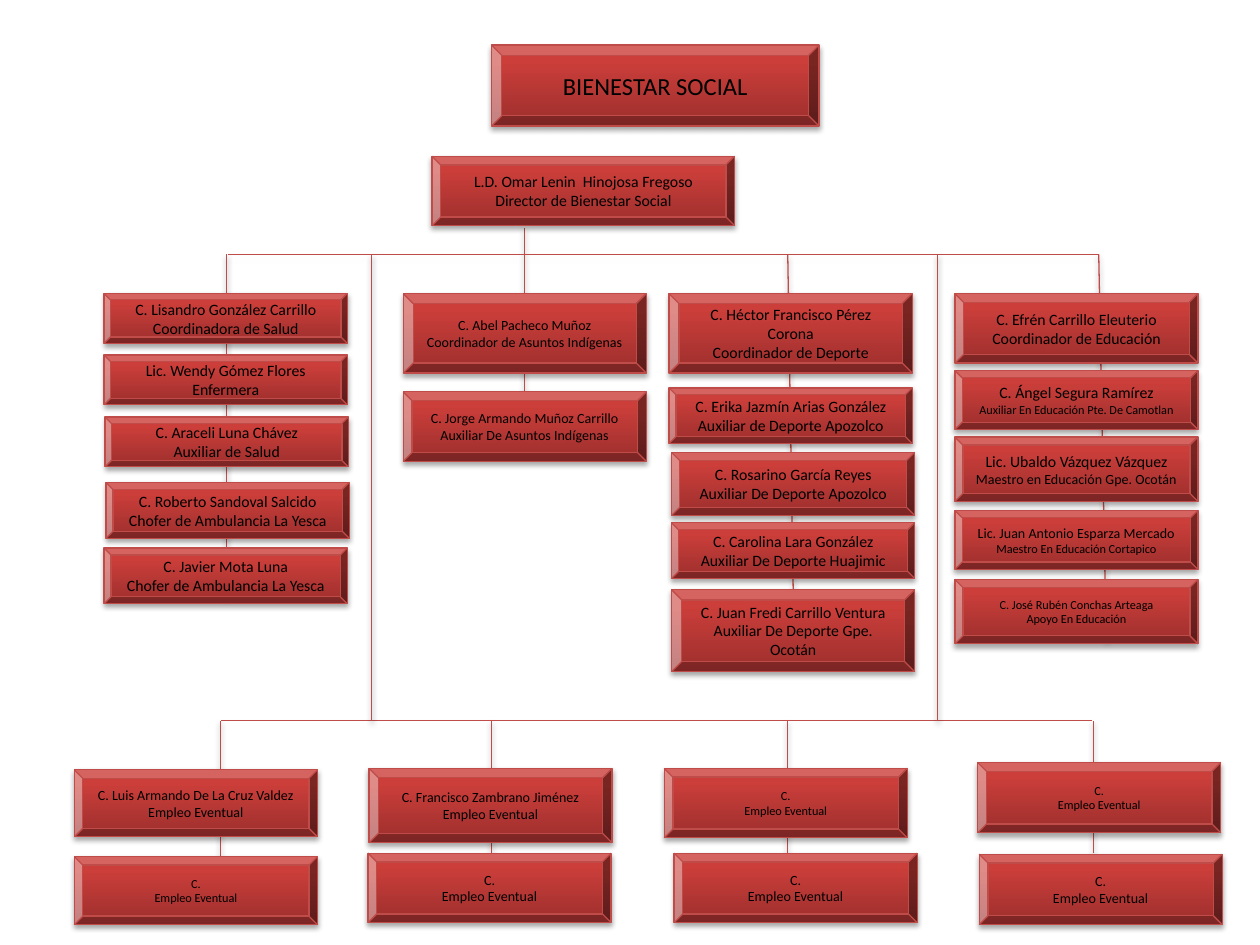
from lxml import etree
from pptx import Presentation
from pptx import util as u
from pptx.dml.color import RGBColor
from pptx.enum import shapes, text

BLACK = RGBColor(0x00, 0x00, 0x00)
BORDER = RGBColor(0xBF, 0x4C, 0x48)
DARK_RED = RGBColor(0x9C, 0x2F, 0x2D)
RED = RGBColor(0xCB, 0x3E, 0x3A)
BRIGHT_RED = RGBColor(0xCE, 0x3B, 0x37)

NS = 'xmlns:a="http://schemas.openxmlformats.org/drawingml/2006/main"'
STOPS = "".join(
    f'<a:gs pos="{pos * 1000}"><a:srgbClr val="{color}"/></a:gs>'
    for pos, color in ((0, DARK_RED), (80, RED), (100, BRIGHT_RED))
)
GRADIENT = (f'<a:gradFill {NS} rotWithShape="1"><a:gsLst>{STOPS}</a:gsLst>'
            '<a:lin ang="16200000" scaled="0"/></a:gradFill>')
SHADOW = (f'<a:effectLst {NS}><a:outerShdw blurRad="{u.Pt(3.1)}" dist="{u.Pt(1.8)}" '
          'dir="5400000" rotWithShape="0">'
          f'<a:srgbClr val="{BLACK}"><a:alpha val="35000"/></a:srgbClr>'
          '</a:outerShdw></a:effectLst>')

BOX_W = 4.9
TOP_BUS, LOW_BUS = 5.13, 14.53
EVENTUAL = "Empleo Eventual"

# left, top, height, then (text, size) for the name and the post
STAFF = [
    # Salud
    (2.1, 5.92, 1, ("C. Lisandro González Carrillo", 9), ("Coordinadora de Salud", 9)),
    (2.1, 7.16, 1, ("Lic. Wendy Gómez Flores", 9), ("Enfermera", 9)),
    (2.12, 8.41, 1, ("C. Araceli Luna Chávez", 9), ("Auxiliar de Salud", 9)),
    (2.14, 9.73, 1.12, ("C. Roberto Sandoval Salcido", 9), ("Chofer de Ambulancia La Yesca", 9)),
    (2.1, 11.05, 1.12, ("C. Javier Mota Luna", 9), ("Chofer de Ambulancia La Yesca", 9)),
    # Asuntos Indígenas
    (8.13, 5.92, 1.6, ("C. Abel Pacheco Muñoz", 8), ("Coordinador de Asuntos Indígenas", 8)),
    (8.13, 7.9, 1.4, ("C. Jorge Armando Muñoz Carrillo", 8), ("Auxiliar De Asuntos Indígenas", 8)),
    # Deporte
    (13.49, 5.92, 1.6, ("C. Héctor Francisco Pérez Corona", 9), ("Coordinador de Deporte", 9)),
    (13.49, 7.82, 1.12, ("C. Erika Jazmín Arias González", 9), ("Auxiliar de Deporte Apozolco", 9)),
    (13.54, 9.12, 1.27, ("C. Rosarino García Reyes", 9), ("Auxiliar De Deporte Apozolco", 9)),
    (13.54, 10.54, 1.12, ("C. Carolina Lara González", 9), ("Auxiliar De Deporte Huajimic", 9)),
    (13.54, 11.89, 1.65, ("C. Juan Fredi Carrillo Ventura", 9), ("Auxiliar De Deporte Gpe. Ocotán", 9)),
    # Educación
    (19.25, 5.92, 1.4, ("C. Efrén Carrillo Eleuterio", 9), ("Coordinador de Educación", 9)),
    (19.25, 7.47, 1.19, ("C. Ángel Segura Ramírez", 9), ("Auxiliar En Educación Pte. De Camotlan", 7)),
    (19.25, 8.81, 1.3, ("Lic. Ubaldo Vázquez Vázquez", 9), ("Maestro en Educación Gpe. Ocotán", 8)),
    (19.25, 10.29, 1.19, ("Lic. Juan Antonio Esparza Mercado", 8), ("Maestro En Educación Cortapico", 7)),
    (19.25, 11.68, 1.3, ("C. José Rubén Conchas Arteaga", 7), ("Apoyo En Educación", 7)),
    # Empleo eventual
    (1.5, 15.52, 1.35, ("C. Luis Armando De La Cruz Valdez", 8), (EVENTUAL, 8)),
    (1.5, 17.27, 1.37, ("C.", 7), (EVENTUAL, 7)),
    (7.44, 15.49, 1.5, ("C. Francisco Zambrano Jiménez", 8), (EVENTUAL, 8)),
    (7.42, 17.2, 1.4, ("C.", 8), (EVENTUAL, 8)),
    (13.39, 15.49, 1.4, ("C.", 7), (EVENTUAL, 7)),
    (13.59, 17.2, 1.4, ("C.", 8), (EVENTUAL, 8)),
    (19.71, 15.37, 1.42, ("C.", 7), (EVENTUAL, 7)),
    (19.74, 17.22, 1.42, ("C.", 8), (EVENTUAL, 8)),
]


class Chart:
    """Holds the shared style and the slide being drawn on."""

    font = "Calibri"
    line_width = u.Pt(0.75)

    def __init__(self, slide):
        self.s = slide

    def outline(self, shape):
        """Give a shape or connector the common line and shadow."""
        shape.line.color.rgb = BORDER
        shape.line.width = self.line_width
        shape._element.spPr.append(etree.fromstring(SHADOW))

    def line(self, x1, y1, x2, y2):
        cn = self.s.shapes.add_connector(
            shapes.MSO_CONNECTOR.STRAIGHT, u.Cm(x1), u.Cm(y1), u.Cm(x2), u.Cm(y2))
        self.outline(cn)
        return cn

    def box(self, left, top, width, height, *lines):
        """Add a bevelled box with one (text, size) paragraph per line."""
        sp = self.s.shapes.add_shape(
            shapes.MSO_SHAPE.BEVEL, u.Cm(left), u.Cm(top), u.Cm(width), u.Cm(height))
        self.outline(sp)
        sp.line._ln.addprevious(etree.fromstring(GRADIENT))
        tf = sp.text_frame
        tf.word_wrap = True
        tf.vertical_anchor = text.MSO_ANCHOR.MIDDLE
        for i, (words, size) in enumerate(lines):
            p = tf.add_paragraph() if i else tf.paragraphs[0]
            p.text = words
            p.alignment = text.PP_ALIGN.CENTER
            p.font.name = self.font
            p.font.size = u.Pt(size)
            p.font.color.rgb = BLACK
        return sp


def main():
    prs = Presentation()
    prs.slide_width, prs.slide_height = u.Cm(25.4), u.Cm(19.05)
    chart = Chart(prs.slides.add_slide(prs.slide_layouts[6]))

    # Lines lie behind the boxes
    for x, bottom in ((22.05, 17.2), (4.45, 17.27), (15.88, 17.2), (9.91, 17.4)):
        chart.line(x, LOW_BUS, x, bottom)
    chart.line(22.15, TOP_BUS, 22.3, 12.9)
    sports = chart.line(15.88, TOP_BUS, 15.99, 11.89)
    indigenous = chart.line(10.58, 4.6, 10.58, 7.9)
    chart.line(4.57, TOP_BUS, 4.57, 12.04)
    chart.line(22.15, TOP_BUS, 4.6, TOP_BUS)
    chart.line(22.02, LOW_BUS, 4.45, LOW_BUS)
    for x in (7.49, 18.9):
        chart.line(x, TOP_BUS, x, LOW_BUS)

    chart.box(9.91, 0.91, 6.6, 1.63, ("BIENESTAR SOCIAL", 14))
    chart.box(8.71, 3.15, 6.1, 1.4,
              ("L.D. Omar Lenin  Hinojosa Fregoso", 9), ("Director de Bienestar Social", 9))
    boxes = {}
    for left, top, height, name, post in STAFF:
        boxes[name[0]] = chart.box(left, top, BOX_W, height, name, post)

    sports.end_connect(boxes["C. Juan Fredi Carrillo Ventura"], 0)
    indigenous.end_connect(boxes["C. Jorge Armando Muñoz Carrillo"], 0)
    prs.save("out.pptx")


if __name__ == "__main__":
    main()
